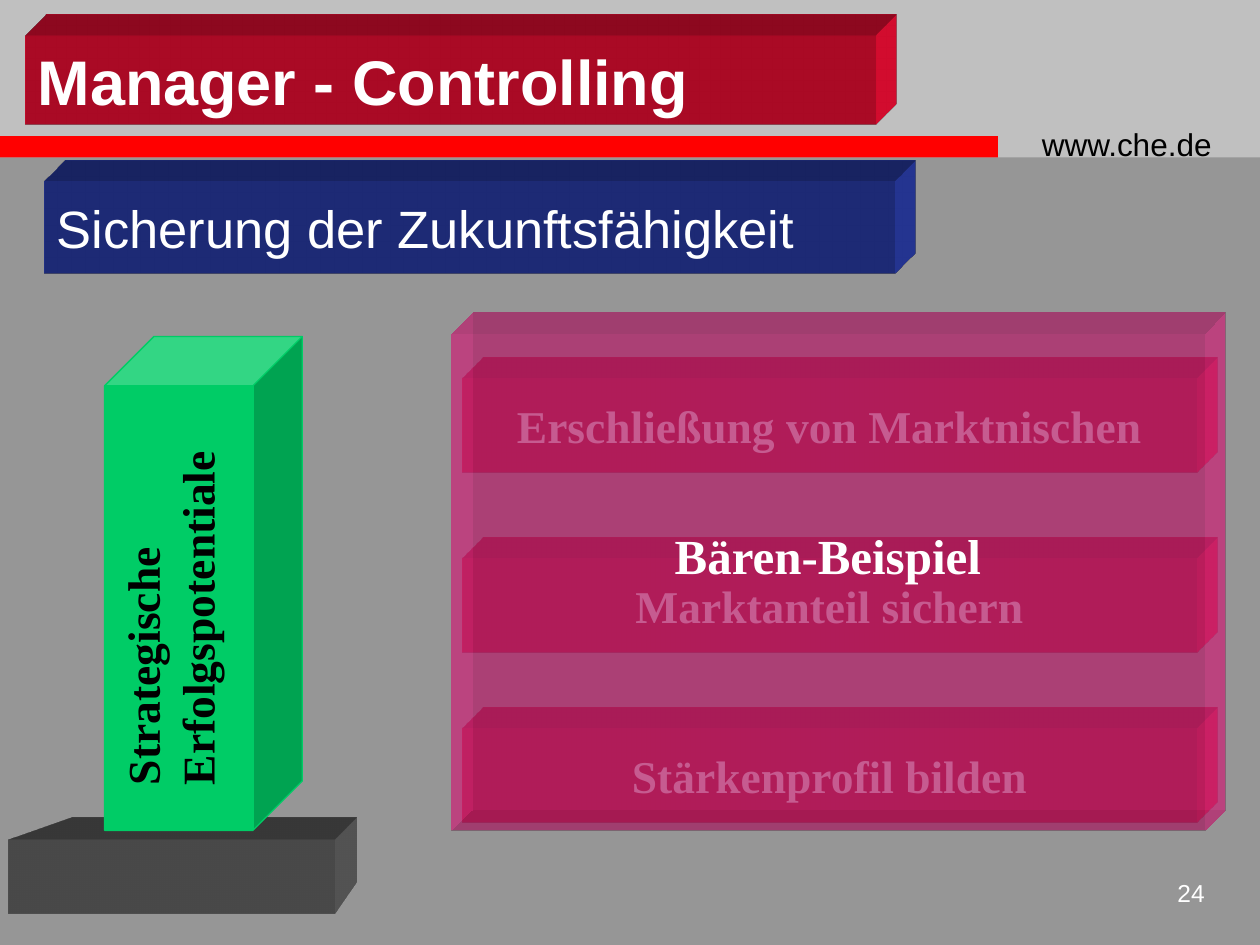
import lxml.etree
import pptx
import pptx.dml.color
import pptx.enum.shapes
import pptx.enum.text
import pptx.oxml
import pptx.oxml.ns
import pptx.util

Inches = pptx.util.Inches
RGBColor = pptx.dml.color.RGBColor
ALIGN = pptx.enum.text.PP_ALIGN
ANCHOR = pptx.enum.text.MSO_ANCHOR
SHAPE = pptx.enum.shapes.MSO_SHAPE

GREY = RGBColor(0x96, 0x96, 0x96)
SILVER = RGBColor(0xC0, 0xC0, 0xC0)
RED = RGBColor(0xFF, 0x00, 0x00)
CRIMSON = RGBColor(0xF0, 0x0E, 0x34)
BLUE = RGBColor(0x29, 0x3B, 0xA5)
PINK = RGBColor(0xFF, 0x33, 0x99)
GREEN = RGBColor(0x00, 0xCC, 0x66)
DARK_GREY = RGBColor(0x5F, 0x5F, 0x5F)
WHITE = RGBColor(0xFF, 0xFF, 0xFF)
BLACK = RGBColor(0x00, 0x00, 0x00)
SERIF = "Times New Roman"

deck = pptx.Presentation()
deck.slide_width, deck.slide_height = Inches(10), Inches(7.5)
page = deck.slides.add_slide(deck.slide_layouts[6])
page.background.fill.solid()
page.background.fill.fore_color.rgb = GREY


def add_block(left, top, width, height, color, camera=None, depth=0.47, kind=SHAPE.RECTANGLE):
    """Add a filled shape; a camera name extrudes it by depth inches."""
    block = page.shapes.add_shape(kind, Inches(left), Inches(top), Inches(width), Inches(height))
    block.shadow.inherit = False
    block.fill.solid()
    block.fill.fore_color.rgb = color
    block.line.fill.background()
    if camera:
        namespace = pptx.oxml.ns.nsdecls("a")
        for xml in (
            f'<a:scene3d {namespace}><a:camera prst="{camera}"/>'
            '<a:lightRig rig="legacyFlat3" dir="b"/></a:scene3d>',
            f'<a:sp3d {namespace} extrusionH="{Inches(depth)}" prstMaterial="legacyMatte">'
            f'<a:extrusionClr><a:srgbClr val="{color}"/></a:extrusionClr></a:sp3d>',
        ):
            block.element.spPr.append(pptx.oxml.parse_xml(xml))
    return block


def write(shape, lines, size, color, font="Arial", bold=False, align=ALIGN.LEFT,
          anchor=ANCHOR.MIDDLE, wrap=False):
    frame = shape.text_frame
    frame.word_wrap = wrap
    frame.vertical_anchor = anchor
    frame.text = "\n".join(lines)
    for para in frame.paragraphs:
        para.alignment = align
        para.font.size = pptx.util.Pt(size)
        para.font.name = font
        para.font.bold = bold
        para.font.color.rgb = color


# Header band, web address and page number
add_block(0, 0, 10, 1.25, SILVER)
add_block(-0.01, 1.08, 7.93, 0.17, RED)
address = page.shapes.add_textbox(Inches(8.17), Inches(0.94), Inches(1.75), Inches(0.4))
write(address, ["www.che.de"], 18, BLACK, anchor=ANCHOR.TOP, wrap=True)
number = page.shapes.add_textbox(Inches(9.08), Inches(6.92), Inches(0.58), Inches(0.42))
write(number, ["24"], 14, WHITE, align=ALIGN.RIGHT, anchor=ANCHOR.TOP, wrap=True)

# Strategy bars
OBLIQUE = "legacyObliqueTopRight"
for top, label in (
    (5.78, "Stärkenprofil bilden"),
    (3, "Erschließung von Marktnischen"),
    (4.43, "Marktanteil sichern"),
):
    bar = add_block(3.67, top, 5.83, 0.75, CRIMSON, OBLIQUE)
    write(bar, [label], 26, WHITE, SERIF, True, ALIGN.CENTER)

# Pillar on its base
add_block(0.07, 6.67, 2.58, 0.58, DARK_GREY, "legacyPerspectiveTopRight", 1.5)
pillar = add_block(0.83, 2.67, 1.57, 3.92, GREEN, kind=SHAPE.CUBE)
pillar.adjustments[0] = 0.33
pillar.adjustments[0] = 0.25
pillar.line.color.rgb = GREEN
pillar.line.width = pptx.util.Pt(0.75)
caption = page.shapes.add_textbox(Inches(-0.24), Inches(4.26), Inches(3.17), Inches(0.97))
caption.rotation = 270
write(caption, ["Strategische", "Erfolgspotentiale"], 26, BLACK, SERIF, True,
      anchor=ANCHOR.TOP, wrap=True)

# Titles
title = add_block(0.2, 0.28, 6.75, 0.71, CRIMSON, OBLIQUE)
write(title, ["Manager - Controlling"], 36, WHITE, bold=True)
subtitle = add_block(0.35, 1.44, 6.75, 0.73, BLUE, OBLIQUE)
write(subtitle, ["Sicherung der Zukunftsfähigkeit"], 30, WHITE)

# Translucent panel over the bars
panel = add_block(3.58, 2.65, 5.98, 3.94, PINK, OBLIQUE)
panel_color = panel.element.spPr.find(pptx.oxml.ns.qn("a:solidFill"))[0]
lxml.etree.SubElement(panel_color, pptx.oxml.ns.qn("a:alpha"), val="50000")
write(panel, ["Bären-Beispiel"], 28, WHITE, SERIF, True, ALIGN.CENTER)
panel.text_frame.margin_bottom = Inches(0.48)

deck.save("out.pptx")
